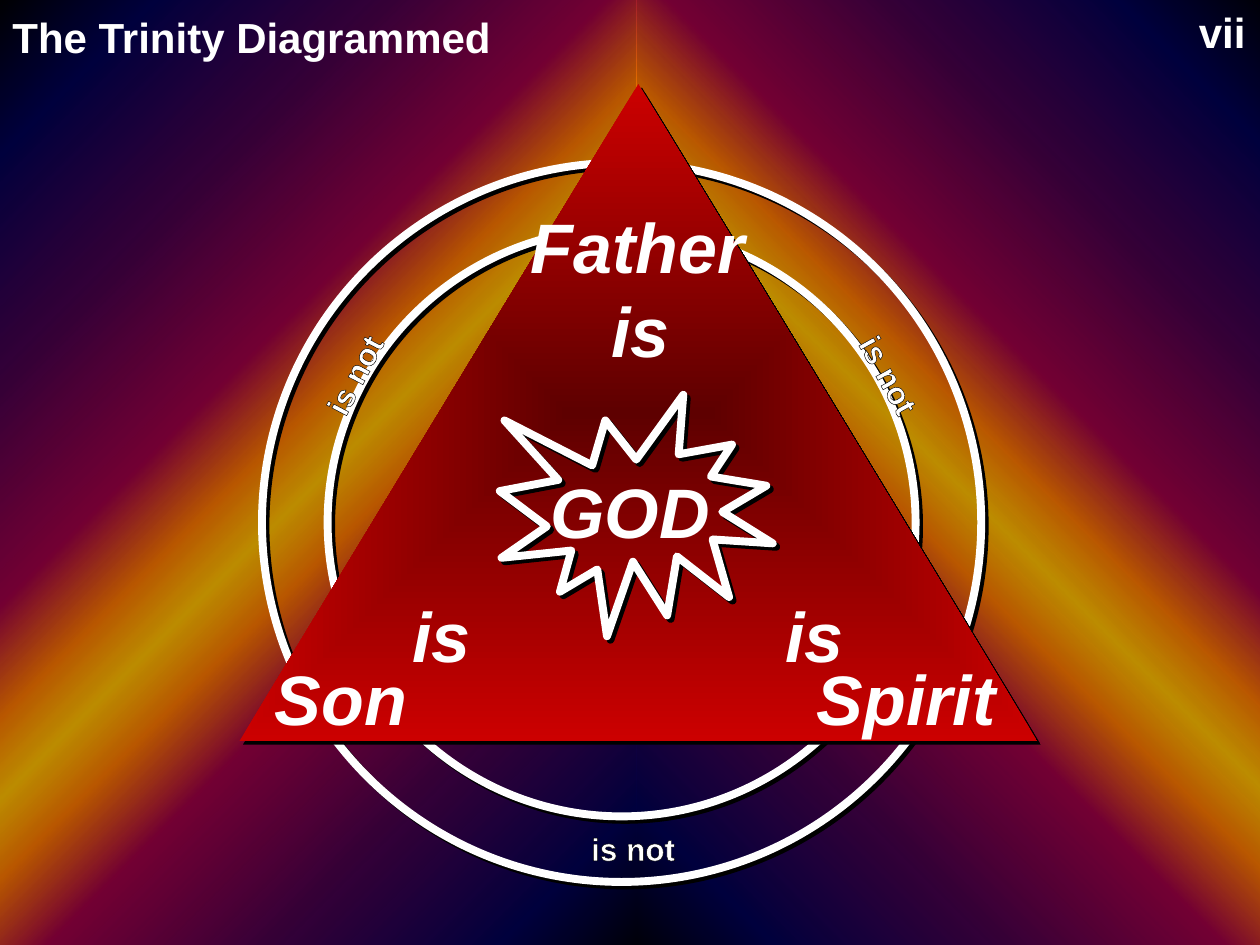
from dataclasses import dataclass
from lxml import etree
from pptx import Presentation
from pptx.dml.color import RGBColor
from pptx.enum.shapes import MSO_SHAPE as SHAPE
from pptx.enum.text import MSO_ANCHOR as ANCHOR, PP_ALIGN as ALIGN
from pptx.oxml import parse_xml
from pptx.oxml.ns import nsdecls, qn
from pptx.util import Inches, Pt

COLS, ROWS = 120, 90


@dataclass(frozen=True)
class Theme:
    font: str = "Arial"
    white: str = "FFFFFF"
    black: str = "000000"
    core: str = "5E0000"
    edge: str = "CC0000"
    name_size: int = 40
    head_size: int = 24
    ring_size: int = 18
    line: float = 4.5
    half_glow: tuple = ((0, "000000", 100), (10, "000040", 95), (25, "400040", 86),
                        (38, "8F0040", 80), (45, "F27300", 76))
    glow_peak: tuple = (50, "FFBF00", 73)

    def glow(self):
        mirror = tuple((100 - pos, c, a) for pos, c, a in reversed(self.half_glow))
        return self.half_glow + (self.glow_peak,) + mirror


def shadow_xml():
    return parse_xml(
        f'<a:effectLst {nsdecls("a")}><a:outerShdw dist="35560" dir="2700000" algn="ctr" '
        'rotWithShape="0"><a:srgbClr val="000000"/></a:outerShdw></a:effectLst>')


def write(tf, text, size, color, font, align=ALIGN.LEFT, italic=False,
          shadow=False, outline=None, spacing=None):
    p = tf.paragraphs[0]
    p.alignment = align
    if spacing:
        p.line_spacing = spacing
    r = p.add_run()
    r.text = text
    f = r.font
    f.name, f.size, f.bold, f.italic = font, Pt(size), True, italic
    f.color.rgb = RGBColor.from_string(color)
    if shadow:
        r._r.rPr.find(qn("a:solidFill")).addnext(shadow_xml())
    if outline:
        r._r.rPr.insert(0, parse_xml(
            f'<a:ln {nsdecls("a")} w="9525"><a:solidFill>'
            f'<a:srgbClr val="{outline}"/></a:solidFill></a:ln>'))


class Canvas:
    def __init__(self, prs, theme):
        self.theme = theme
        self.unit_x, self.unit_y = prs.slide_width / COLS, prs.slide_height / ROWS
        self.s = prs.slides.add_slide(prs.slide_layouts[6])
        fill = self.s.background.fill
        fill.solid()
        fill.fore_color.rgb = RGBColor.from_string(theme.black)

    def place(self, x, y, w, h):
        return (round(x * self.unit_x), round(y * self.unit_y),
                round(w * self.unit_x), round(h * self.unit_y))

    def shape(self, kind, box, outlined=False, shadow=True):
        sp = self.s.shapes.add_shape(kind, *self.place(*box))
        sp.shadow.inherit = False
        sp.fill.background()
        if outlined:
            sp.line.color.rgb = RGBColor.from_string(self.theme.white)
            sp.line.width = Pt(self.theme.line)
        else:
            sp.line.fill.background()
        if shadow:
            pr = sp._element.spPr
            pr.replace(pr.find(qn("a:effectLst")), shadow_xml())
        return sp

    def gradient(self, sp, stops, angle=None):
        grad = etree.Element(qn("a:gradFill"), rotWithShape="1")
        stop_list = etree.SubElement(grad, qn("a:gsLst"))
        for pos, color, alpha in stops:
            gs = etree.SubElement(stop_list, qn("a:gs"), pos=str(pos * 1000))
            clr = etree.SubElement(gs, qn("a:srgbClr"), val=color)
            if alpha < 100:
                etree.SubElement(clr, qn("a:alpha"), val=str(alpha * 1000))
        if angle is None:
            way = etree.SubElement(grad, qn("a:path"), {"path": "shape"})
            etree.SubElement(way, qn("a:fillToRect"), {side: "50000" for side in "ltrb"})
        else:
            etree.SubElement(grad, qn("a:lin"), ang=str(angle * 60000), scaled="0")
        pr = sp._element.spPr
        pr.replace(pr.find(qn("a:noFill")), grad)

    def ring(self, cx, cy, d):
        self.shape(SHAPE.OVAL, (cx - d / 2, cy - d / 2, d, d), outlined=True)

    def text(self, text, box, size, wrap=True, rotation=0, **fmt):
        tb = self.s.shapes.add_textbox(*self.place(*box))
        tb.rotation = rotation
        tf = tb.text_frame
        tf.word_wrap = wrap
        tf.vertical_anchor = ANCHOR.TOP
        write(tf, text, size, self.theme.white, self.theme.font, **fmt)


def main():
    theme = Theme()
    prs = Presentation()
    prs.slide_width, prs.slide_height = Inches(10), Inches(7.5)
    c = Canvas(prs, theme)

    half = 61.3
    middle = 59.9
    for x, angle in ((middle + 0.7, 315), (middle - half + 0.7, 45)):
        panel = c.shape(SHAPE.RECTANGLE, (x, 0, half, 92.3), shadow=False)
        c.gradient(panel, theme.glow(), angle)

    for diameter in (68.5, 56):
        c.ring(59.2, 49.75, diameter)

    triangle = c.shape(SHAPE.ISOSCELES_TRIANGLE, (22.8, 8, 76, 62.6))
    c.gradient(triangle, ((0, theme.core, 100), (100, theme.edge, 100)))

    def names(rows):
        for text, x, y, w, align in rows:
            c.text(text, (x, y, w, 9.25), theme.name_size, align=align,
                   italic=True, shadow=True)

    names((("is", 54, 26.75, 14, ALIGN.CENTER),
           ("is", 73.6, 55.8, 14, ALIGN.LEFT),
           ("is", 32, 55.8, 14, ALIGN.RIGHT),
           ("Son", 25, 61.8, 24, ALIGN.LEFT),
           ("GOD", 51, 44, 18, ALIGN.CENTER)))
    c.shape(SHAPE.EXPLOSION1, (47.6, 37.6, 26, 23), outlined=True)
    names((("Father", 48.75, 18.8, 24, ALIGN.CENTER),
           ("Spirit", 72, 61.8, 24, ALIGN.RIGHT)))

    for box, rotation in (((26.2, 33.6, 14, 3.6), 297.8),
                          ((78.2, 33.6, 14, 3.6), 61.1),
                          ((53, 78.4, 14.6, 2.6), 0)):
        c.text("is not", box, theme.ring_size, wrap=False, rotation=rotation,
               align=ALIGN.CENTER, outline=theme.black)

    c.text("The Trinity Diagrammed", (0, 1, 68, 10), theme.head_size, spacing=0.9)
    c.text("vii", (113, 0, 7, 6), theme.head_size, wrap=False)
    prs.save("out.pptx")


main()
